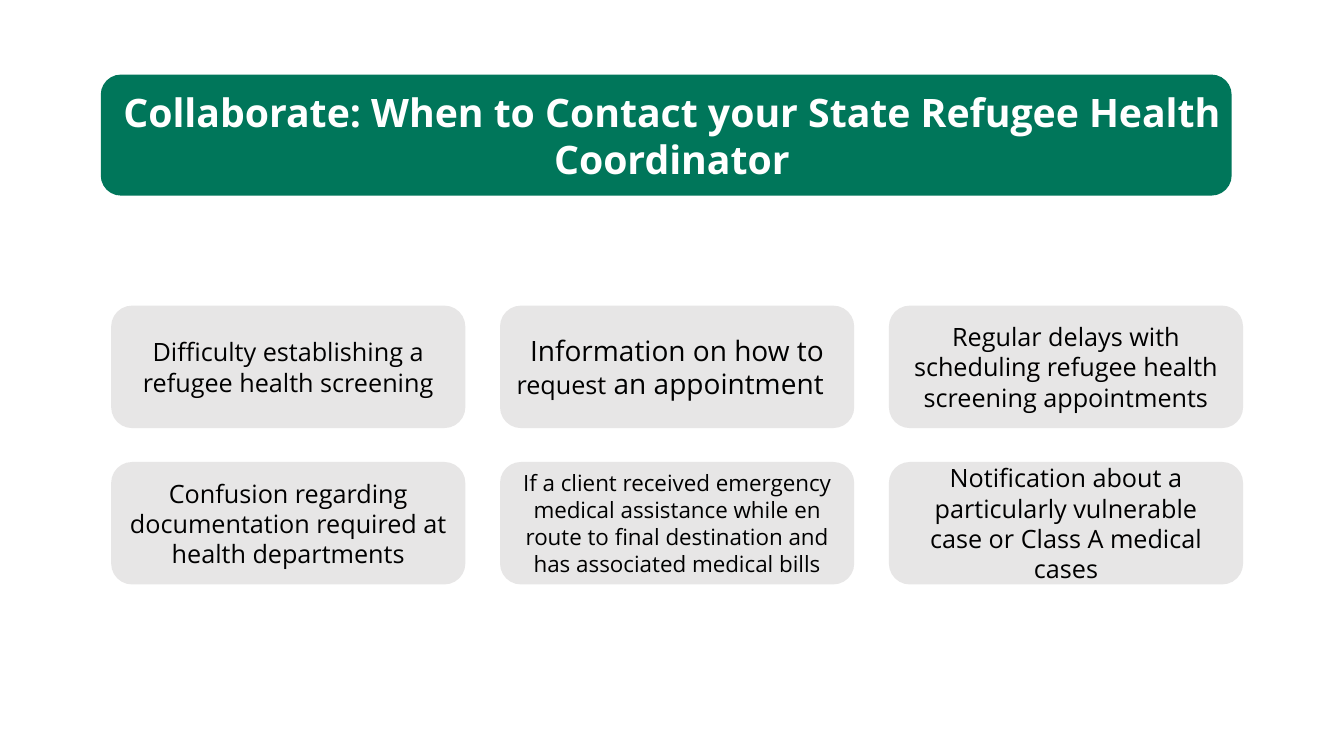
"""Build a slide on when to contact the State Refugee Health Coordinator."""
from dataclasses import dataclass

from pptx import Presentation
from pptx.dml.color import RGBColor
from pptx.enum.shapes import MSO_SHAPE
from pptx.enum.text import MSO_ANCHOR, MSO_AUTO_SIZE, PP_ALIGN
from pptx.shapes.autoshape import Shape
from pptx.slide import Slide
from pptx.text.text import TextFrame
from pptx.util import Cm, Pt

ROUNDED = MSO_SHAPE.ROUNDED_RECTANGLE
CENTER = PP_ALIGN.CENTER
MIDDLE = MSO_ANCHOR.MIDDLE
NO_FIT = MSO_AUTO_SIZE.NONE
TITLE_ONLY = 5


@dataclass(frozen=True)
class Theme:
    font: str = "Open Sans"
    banner: RGBColor = RGBColor(0x00, 0x76, 0x5A)
    card: RGBColor = RGBColor(0xE7, 0xE6, 0xE6)
    title_text: RGBColor = RGBColor(0xFF, 0xFF, 0xFF)
    card_text: RGBColor = RGBColor(0x00, 0x00, 0x00)
    title_size: int = 28
    large_size: int = 20
    body_size: int = 18
    small_size: int = 16


@dataclass(frozen=True)
class Area:
    left: float
    top: float
    width: float
    height: float


@dataclass(frozen=True)
class Span:
    text: str
    size: int


THEME = Theme()
BANNER = Area(2.54, 1.88, 28.5, 3.05)
TITLE = Area(2.54, 2.08, 28.78, 2.64)
FIRST_CARD = Area(2.82, 7.72, 8.89, 3.05)
COLUMNS = 3
COLUMN_STEP = 9.8
ROW_STEP = 3.94

TITLE_SPAN = Span("Collaborate: When to Contact your State Refugee Health Coordinator", THEME.title_size)
CARDS = [
    [Span("Difficulty establishing a refugee health screening", THEME.body_size)],
    [
        Span("Information on how to ", THEME.large_size),
        Span("request", THEME.body_size),
        Span(" an appointment\t", THEME.large_size),
    ],
    [Span("Regular delays with scheduling refugee health screening appointments", THEME.body_size)],
    [Span("Confusion regarding documentation required at health departments", THEME.body_size)],
    [
        Span(
            "If a client received emergency medical assistance while en route "
            "to final destination and has associated medical bills",
            THEME.small_size,
        )
    ],
    [Span("Notification about a particularly vulnerable case or Class A medical cases", THEME.body_size)],
]


def write_text(frame: TextFrame, spans: list[Span], *, color: RGBColor, bold: bool = False) -> None:
    """Write centred spans into the first paragraph of a frame."""
    frame.word_wrap = True
    frame.auto_size = NO_FIT
    frame.vertical_anchor = MIDDLE
    para = frame.paragraphs[0]
    para.alignment = CENTER
    for span in spans:
        run = para.add_run()
        run.text = span.text
        run.font.name = THEME.font
        run.font.size = Pt(span.size)
        run.font.bold = bold
        run.font.color.rgb = color


def add_box(page: Slide, area: Area, *, fill: RGBColor, outlined: bool = False) -> Shape:
    """Add a flat rounded box."""
    box = page.shapes.add_shape(ROUNDED, Cm(area.left), Cm(area.top), Cm(area.width), Cm(area.height))
    box.shadow.inherit = False
    box.fill.solid()
    box.fill.fore_color.rgb = fill
    if outlined:
        box.line.color.rgb = fill
        box.line.width = Pt(1)
    else:
        box.line.fill.background()
    return box


def add_cards(page: Slide) -> None:
    """Lay the cards out row by row."""
    for index, spans in enumerate(CARDS):
        row, column = divmod(index, COLUMNS)
        area = Area(
            FIRST_CARD.left + column * COLUMN_STEP,
            FIRST_CARD.top + row * ROW_STEP,
            FIRST_CARD.width,
            FIRST_CARD.height,
        )
        box = add_box(page, area, fill=THEME.card, outlined=True)
        write_text(box.text_frame, spans, color=THEME.card_text)


def place_title(page: Slide) -> None:
    """Format the title placeholder and bring it in front of the banner."""
    title = page.shapes.title
    title.left, title.top = Cm(TITLE.left), Cm(TITLE.top)
    title.width, title.height = Cm(TITLE.width), Cm(TITLE.height)
    write_text(title.text_frame, [TITLE_SPAN], color=THEME.title_text, bold=True)
    title.element.getparent().append(title.element)


def main() -> None:
    """Create and save the deck."""
    deck = Presentation()
    deck.slide_width, deck.slide_height = Cm(33.87), Cm(19.05)
    page = deck.slides.add_slide(deck.slide_layouts[TITLE_ONLY])
    add_box(page, BANNER, fill=THEME.banner)
    add_cards(page)
    place_title(page)
    deck.save("out.pptx")


if __name__ == "__main__":
    main()
